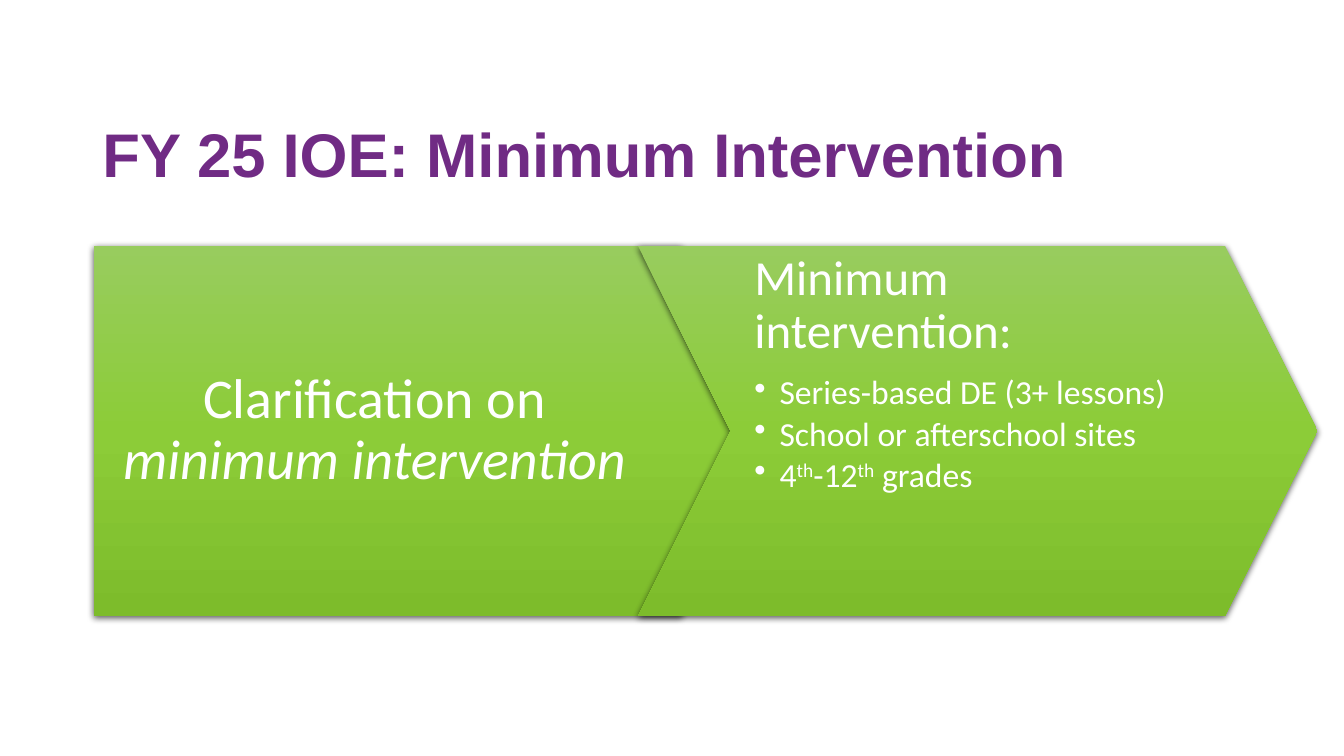
from pptx import Presentation
from pptx.dml.color import RGBColor
from pptx.enum import shapes, text
from pptx.oxml import parse_xml
from pptx.oxml.ns import nsdecls
from pptx.util import Pt

TITLE = "FY 25 IOE: Minimum Intervention"
CLAIM = [("Clarification on ", ""), ("minimum intervention", "italic")]
HEAD = [("Minimum intervention:", "")]
POINTS = [
    [("Series-based DE (3+ lessons)", "")],
    [("School or afterschool sites", "")],
    [("4", ""), ("th", "super"), ("-12", ""), ("th", "super"), (" grades", "")],
]

PURPLE = RGBColor(0x70, 0x2B, 0x84)
WHITE = RGBColor(0xFF, 0xFF, 0xFF)
GREENS = [(0, RGBColor(0x98, 0xCC, 0x5E)), (50, RGBColor(0x8C, 0xCC, 0x38)),
          (100, RGBColor(0x7D, 0xBC, 0x2B))]
SHADE = RGBColor(0, 0, 0)

LEFT, TOP, WIDE, HIGH = 67, 175.7, 485.3, 264.2
STEP = 388.8
POINT = HIGH / 4


def add_arrow(slide, kind, left):
    arrow = slide.shapes.add_shape(kind, Pt(left), Pt(TOP), Pt(WIDE), Pt(HIGH))
    arrow.adjustments[0] = 0.25
    stops = "".join(f'<a:gs pos="{pos * 1000}"><a:srgbClr val="{tone}"/></a:gs>'
                    for pos, tone in GREENS)
    parts = [
        f'<a:gradFill {nsdecls("a")} rotWithShape="1"><a:gsLst>{stops}</a:gsLst>'
        '<a:lin ang="5400000" scaled="0"/></a:gradFill>',
        f'<a:ln {nsdecls("a")}><a:noFill/></a:ln>',
        f'<a:effectLst {nsdecls("a")}><a:outerShdw blurRad="{Pt(4.5)}" dist="{Pt(1.5)}" '
        f'dir="5400000" algn="ctr" rotWithShape="0"><a:srgbClr val="{SHADE}">'
        '<a:alpha val="63000"/></a:srgbClr></a:outerShdw></a:effectLst>',
    ]
    for part in parts:
        arrow.element.spPr.append(parse_xml(part))


def add_box(slide, left, width, sides, ends, anchor):
    box = slide.shapes.add_textbox(Pt(left), Pt(TOP), Pt(width), Pt(HIGH))
    frame = box.text_frame
    frame.word_wrap = True
    frame.vertical_anchor = anchor
    frame.margin_left, frame.margin_right = map(Pt, sides)
    frame.margin_top = frame.margin_bottom = Pt(ends)
    return frame


def fill_para(para, runs, size, after=0):
    para.line_spacing = 0.9
    para.space_after = Pt(after)
    for words, look in runs:
        run = para.add_run()
        run.text = words
        font = run.font
        font.name, font.size = "Calibri", Pt(size)
        font.color.rgb = WHITE
        if look == "italic":
            font.italic = True
        if look == "super":
            run._r.get_or_add_rPr().set("baseline", "30000")


def add_bullet(para):
    props = para._p.get_or_add_pPr()
    props.set("marL", str(Pt(18)))
    props.set("indent", str(Pt(-18)))
    props.append(parse_xml(f'<a:buChar {nsdecls("a")} char="•"/>'))


def main():
    deck = Presentation()
    deck.slide_width, deck.slide_height = Pt(960), Pt(540)
    slide = deck.slides.add_slide(deck.slide_layouts[5])

    title = slide.shapes.title
    title.left, title.top, title.width, title.height = map(Pt, (66, 60.5, 828, 104.4))
    frame = title.text_frame
    frame.text = TITLE
    frame.vertical_anchor = text.MSO_ANCHOR.MIDDLE
    para = frame.paragraphs[0]
    para.alignment = text.PP_ALIGN.LEFT
    para.line_spacing = 0.9
    font = para.runs[0].font
    font.name, font.size, font.bold = "Arial", Pt(44), True
    font.color.rgb = PURPLE

    add_arrow(slide, shapes.MSO_SHAPE.PENTAGON, LEFT)
    frame = add_box(slide, LEFT, WIDE - POINT / 2, (17, 68.4), 8,
                    text.MSO_ANCHOR.MIDDLE)
    para = frame.paragraphs[0]
    para.alignment = text.PP_ALIGN.CENTER
    fill_para(para, CLAIM, 40)

    add_arrow(slide, shapes.MSO_SHAPE.CHEVRON, LEFT + STEP)
    frame = add_box(slide, LEFT + STEP + POINT, WIDE - 2 * POINT, (17, 17), 5,
                    text.MSO_ANCHOR.TOP)
    fill_para(frame.paragraphs[0], HEAD, 35, 12.25)
    for runs in POINTS:
        para = frame.add_paragraph()
        para.level = 1
        add_bullet(para)
        fill_para(para, runs, 24, 3.6)

    deck.save("out.pptx")


if __name__ == "__main__":
    main()
